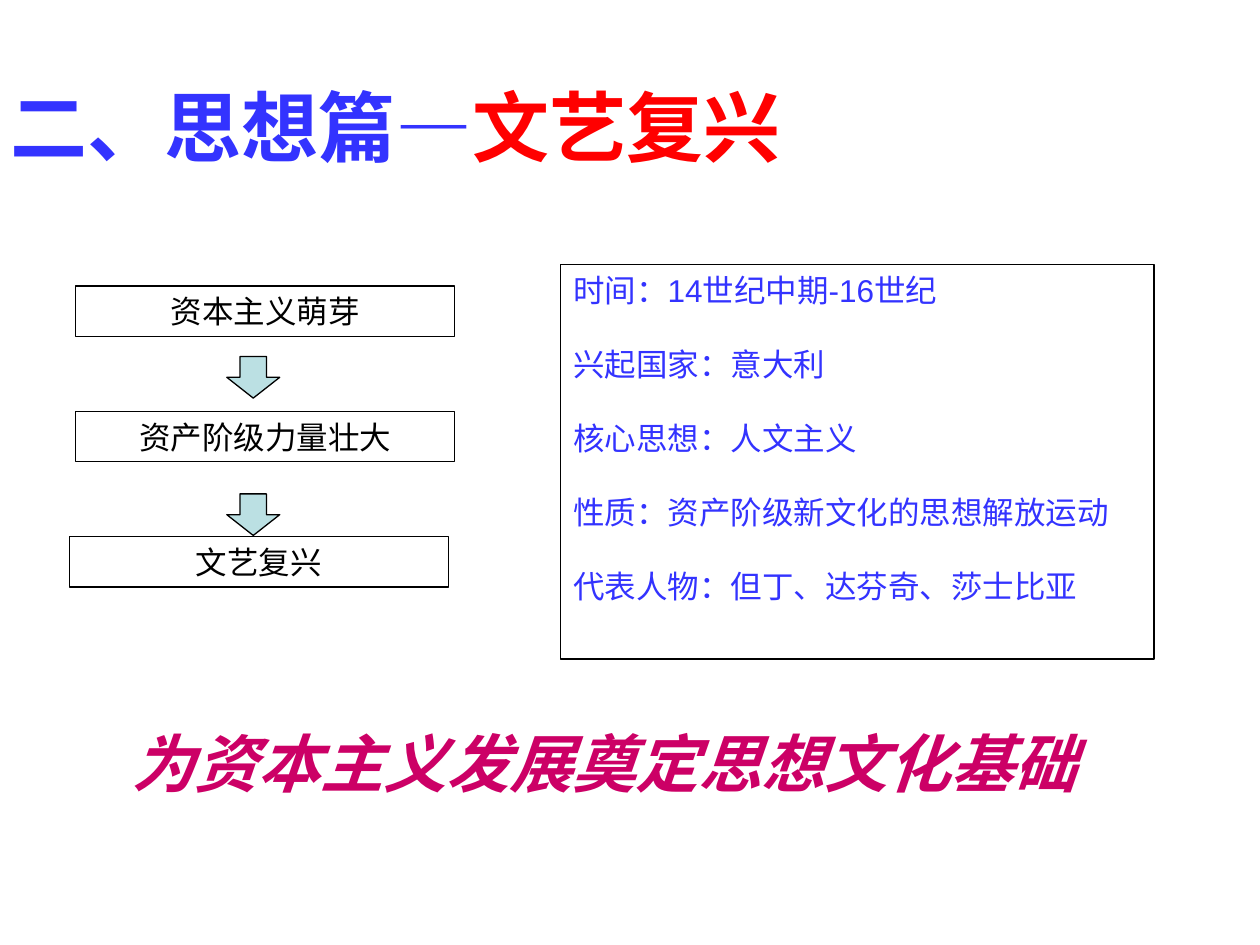
from pptx import Presentation
from pptx.dml.color import RGBColor
from pptx.enum.shapes import MSO_SHAPE
from pptx.enum.text import MSO_ANCHOR, MSO_AUTO_SIZE, PP_ALIGN
from pptx.util import Inches, Pt

RECTANGLE, DOWN_ARROW = MSO_SHAPE.RECTANGLE, MSO_SHAPE.DOWN_ARROW
LEFT, CENTER = PP_ALIGN.LEFT, PP_ALIGN.CENTER
TOP, MIDDLE = MSO_ANCHOR.TOP, MSO_ANCHOR.MIDDLE
NO_FIT = MSO_AUTO_SIZE.NONE

BLUE, RED, BLACK, MAGENTA, PALE_TEAL = "3333FF", "FF0000", "000000", "CC0066", "BBE0E3"
TITLE_FORMAT = {"name": "Arial", "size": Pt(44), "bold": True}
BODY_FORMAT = {"name": "Arial", "size": Pt(18), "bold": False}
CLOSING_FORMAT = {"name": "Arial", "size": Pt(36), "bold": True, "italic": True}

CAUSES = ["资本主义萌芽", "资产阶级力量壮大", "文艺复兴"]
FACTS = [
    "时间：14世纪中期-16世纪",
    "兴起国家：意大利",
    "核心思想：人文主义",
    "性质：资产阶级新文化的思想解放运动",
    "代表人物：但丁、达芬奇、莎士比亚",
]


def color(value):
    return RGBColor.from_string(value)


def inches(box):
    return [Inches(length) for length in box]


def add_span(para, text, text_color, text_format):
    span = para.add_run()
    span.text = text
    for name, value in text_format.items():
        setattr(span.font, name, value)
    span.font.color.rgb = color(text_color)


def set_frame(frame, anchor):
    settings = {"word_wrap": True, "auto_size": NO_FIT, "vertical_anchor": anchor}
    for name, value in settings.items():
        setattr(frame, name, value)


def write_lines(frame, lines, text_color, text_format, align, anchor=TOP, gap=0):
    set_frame(frame, anchor)
    for index, line in enumerate(lines):
        para = frame.add_paragraph() if index else frame.paragraphs[0]
        para.alignment = align
        para.space_before = Pt(gap if index else 0)
        add_span(para, line, text_color, text_format)


def add_outlined(page, kind, box, fill=None):
    shape = page.shapes.add_shape(kind, *inches(box))
    shape.shadow.inherit = False
    shape.line.color.rgb = color(BLACK)
    shape.line.width = Pt(0.75)
    if fill:
        shape.fill.solid()
        shape.fill.fore_color.rgb = color(fill)
    else:
        shape.fill.background()
    return shape


def place_title(page, box):
    title = page.shapes.title
    title.left, title.top, title.width, title.height = inches(box)
    set_frame(title.text_frame, MIDDLE)
    para = title.text_frame.paragraphs[0]
    para.alignment = LEFT
    add_span(para, "二、思想篇—", BLUE, TITLE_FORMAT)
    add_span(para, "文艺复兴", RED, {**TITLE_FORMAT, "name": "Noto Sans CJK SC"})


def add_cause_chain(page, box):
    left, top, width, height = box
    step_height = 0.4
    pitch = (height - step_height) / (len(CAUSES) - 1)
    offsets = [0.05, 0.05, 0]
    for index, (cause, offset) in enumerate(zip(CAUSES, offsets)):
        step_box = (left + offset, top + index * pitch, width - 0.05, step_height)
        step = add_outlined(page, RECTANGLE, step_box)
        write_lines(step.text_frame, [cause], BLACK, BODY_FORMAT, CENTER)
    for drop in (0.56, 1.65):
        add_outlined(page, DOWN_ARROW, (left + 1.25, top + drop, 0.42, 0.33), PALE_TEAL)


def add_fact_panel(page, box):
    panel = add_outlined(page, RECTANGLE, box)
    write_lines(panel.text_frame, FACTS, BLUE, BODY_FORMAT, LEFT, gap=20.7)


def add_closing_line(page, box):
    closing = page.shapes.add_textbox(*inches(box))
    write_lines(closing.text_frame, ["为资本主义发展奠定思想文化基础"],
                MAGENTA, CLOSING_FORMAT, CENTER)


def main():
    deck = Presentation()
    deck.slide_width, deck.slide_height = Inches(10), Inches(7.5)
    page = deck.slides.add_slide(deck.slide_layouts[5])
    place_title(page, (-0.02, 0.19, 7.22, 1.61))
    add_cause_chain(page, (0.55, 2.27, 3.06, 2.39))
    add_fact_panel(page, (4.45, 2.1, 4.71, 3.13))
    add_closing_line(page, (0.78, 5.7, 8.03, 0.71))
    deck.save("out.pptx")


if __name__ == "__main__":
    main()
